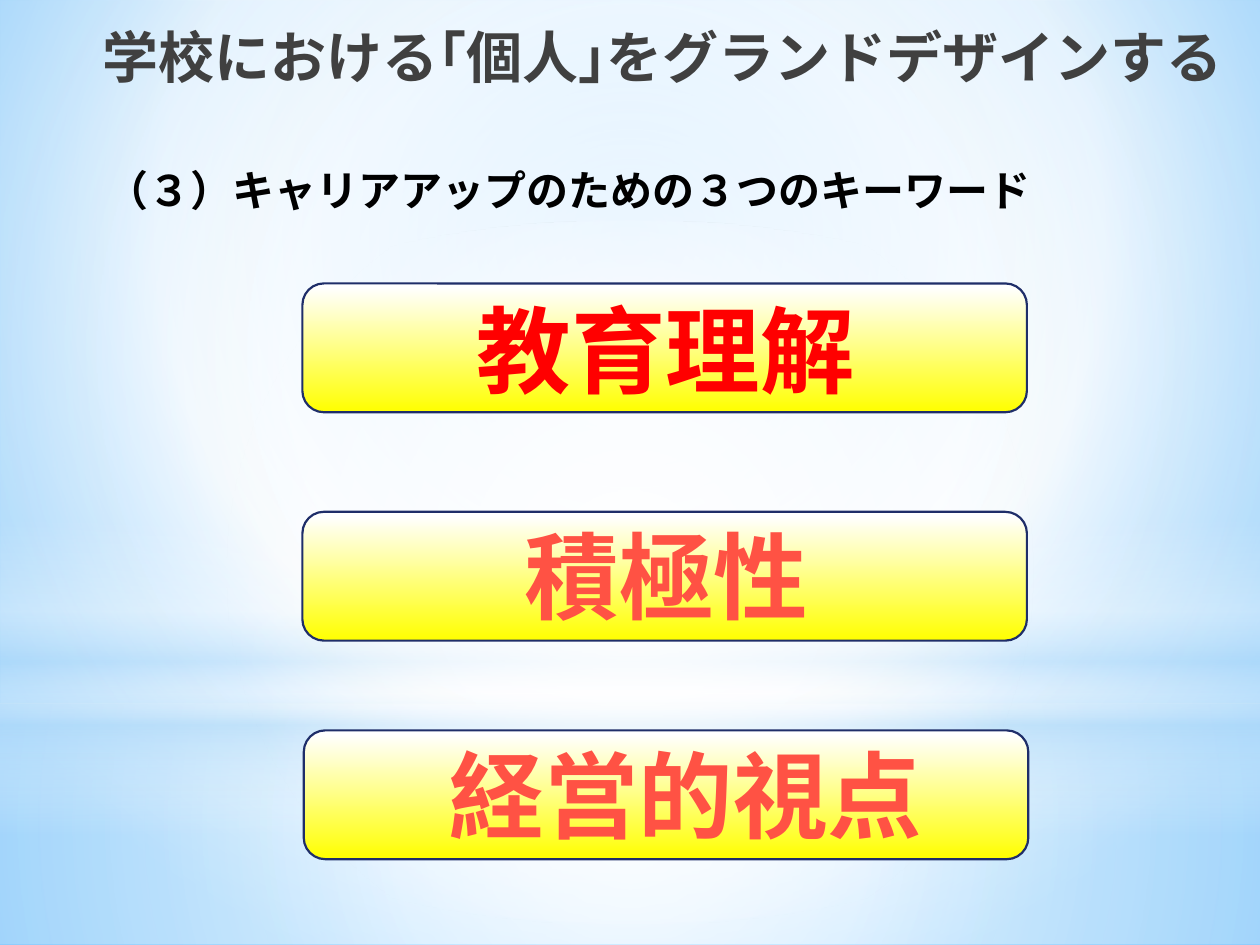
from dataclasses import dataclass

from lxml import etree
from pptx import Presentation
from pptx.dml.color import RGBColor
from pptx.enum.shapes import MSO_SHAPE
from pptx.enum.text import MSO_ANCHOR, MSO_AUTO_SIZE, PP_ALIGN
from pptx.oxml.ns import qn
from pptx.util import Pt

RECTANGLE, ELLIPSE, ROUNDED = MSO_SHAPE.RECTANGLE, MSO_SHAPE.OVAL, MSO_SHAPE.ROUNDED_RECTANGLE
LEFT, CENTER, RIGHT = PP_ALIGN.LEFT, PP_ALIGN.CENTER, PP_ALIGN.RIGHT
TOP = MSO_ANCHOR.TOP
GROW, FIXED = MSO_AUTO_SIZE.SHAPE_TO_FIT_TEXT, MSO_AUTO_SIZE.NONE
MIDDLE = (50, 50, 50, 50)


@dataclass(frozen=True)
class Gradient:
    stops: tuple
    focus: tuple = ()


@dataclass(frozen=True)
class Theme:
    latin: str = "Cabin"
    japanese: str = "Noto Sans CJK JP"
    title_size: int = 32
    heading_size: int = 24
    keyword_size: int = 54
    black: str = "000000"
    red: str = "FF0000"
    outline: str = "1F2E69"
    outline_width: float = 1.25
    background: Gradient = Gradient(
        ((0, "9ED5FF"), (60, "FFFFFF"), (100, "5BB9FF")), (20, 10, 20, 60))
    floor: Gradient = Gradient(
        ((0, "FFFFFF", 91), (37, "FFFFFF", 76), (100, "B4DCFA", 79)), MIDDLE)
    wall: Gradient = Gradient(
        ((0, "FFFFFF", 89), (48, "FFFFFF", 62), (100, "B4DCFA", 79)), MIDDLE)
    horizon: Gradient = Gradient(
        ((0, "FFFFFF", 0), (29, "FFFFFF", 30), (45, "B4DCFA", 40),
         (55, "FFFFFF", 26), (65, "B4DCFA", 60), (100, "FFFFFF", 0)))
    glow: Gradient = Gradient(((0, "FFFFFF"), (56, "FFFFFF", 0)), MIDDLE)
    title_ink: Gradient = Gradient(((0, "000000"), (40, "404040"), (100, "212745", 65)))
    keyword_ink: Gradient = Gradient(((0, "8A1300"), (78, "FF5244"), (100, "FFF0F0")))
    panel: Gradient = Gradient(((0, "FFFFFF"), (3, "FFFFFF"), (100, "FFFF00")))


def paint(fill, host, color):
    if isinstance(color, str):
        fill.solid()
        fill.fore_color.rgb = RGBColor.from_string(color)
        return
    fill.gradient()
    element = next(host.iter(qn("a:gradFill")))
    for child in list(element):
        element.remove(child)
    stops = etree.SubElement(element, qn("a:gsLst"))
    for position, rgb, *opacity in color.stops:
        stop = etree.SubElement(stops, qn("a:gs"), pos=str(position * 1000))
        tint = etree.SubElement(stop, qn("a:srgbClr"), val=rgb)
        for percent in opacity:
            etree.SubElement(tint, qn("a:alpha"), val=str(percent * 1000))
    if color.focus:
        circle = etree.SubElement(element, qn("a:path"), path="circle")
        sides = {side: str(percent * 1000) for side, percent in zip("ltrb", color.focus)}
        etree.SubElement(circle, qn("a:fillToRect"), sides)
    else:
        etree.SubElement(element, qn("a:lin"), ang="5400000", scaled="0")


def write_text(shape, text, *, size, color, font, east_asian, align=LEFT, wrap=True, auto_size=GROW):
    frame = shape.text_frame
    frame.word_wrap = wrap
    frame.auto_size = auto_size
    frame.vertical_anchor = TOP
    paragraph = frame.paragraphs[0]
    paragraph.alignment = align
    run = paragraph.add_run()
    run.text = text
    run.font.size = Pt(size)
    run.font.bold = True
    paint(run.font.fill, shape.element, color)
    run.font.name = font
    properties = next(shape.element.iter(qn("a:rPr")))
    properties.find(qn("a:latin")).addnext(
        etree.Element(qn("a:ea"), typeface=east_asian))


class SlideBuilder:
    """Draws themed elements on the current slide."""

    def __init__(self, slide, theme):
        self.slide = slide
        self.theme = theme

    def background(self, gradient):
        paint(self.slide.background.fill, self.slide.element, gradient)

    def shape(self, kind, box, gradient, outlined=False):
        shape = self.slide.shapes.add_shape(kind, *map(Pt, box))
        shape.shadow.inherit = False
        paint(shape.fill, shape.element, gradient)
        if outlined:
            shape.line.color.rgb = RGBColor.from_string(self.theme.outline)
            shape.line.width = Pt(self.theme.outline_width)
        else:
            shape.line.fill.background()

    def text(self, text, box, **style):
        shape = self.slide.shapes.add_textbox(*map(Pt, box))
        style.setdefault("font", self.theme.latin)
        write_text(shape, text, east_asian=self.theme.japanese, **style)


def main():
    theme = Theme()
    presentation = Presentation()
    presentation.slide_width, presentation.slide_height = Pt(720), Pt(540)
    builder = SlideBuilder(presentation.slides.add_slide(presentation.slide_layouts[6]), theme)

    builder.background(theme.background)
    builder.shape(RECTANGLE, (0, 402, 720, 138), theme.floor)
    builder.shape(RECTANGLE, (0, 0, 720, 402), theme.wall)
    builder.shape(RECTANGLE, (0, 297, 720, 180), theme.horizon)
    builder.shape(ELLIPSE, (0, 126, 720, 402), theme.glow)

    builder.text("学校における｢個人｣をグランドデザインする", (14.4, 9.5, 692, 90),
                 size=theme.title_size, color=theme.title_ink, align=RIGHT, auto_size=FIXED)
    builder.text("（３）キャリアアップのための３つのキーワード", (54, 90.7, 590, 36),
                 size=theme.heading_size, color=theme.black, font=theme.japanese)

    keywords = (
        ("教育理解", 172.8, 162, (263.5, 163.4, 234), theme.red),
        ("積極性", 172.8, 292.5, (291.6, 292.5, 178.6), theme.keyword_ink),
        ("経営的視点", 173.6, 417.4, (247.7, 417.4, 288.7), theme.keyword_ink),
    )
    for _, left, top, _, _ in keywords:
        builder.shape(ROUNDED, (left, top, 414, 73.6), theme.panel, outlined=True)
    for keyword, _, _, label, color in keywords:
        builder.text(keyword, (*label, 72.7), size=theme.keyword_size,
                     color=color, align=CENTER, wrap=False)

    presentation.save("out.pptx")


if __name__ == "__main__":
    main()
